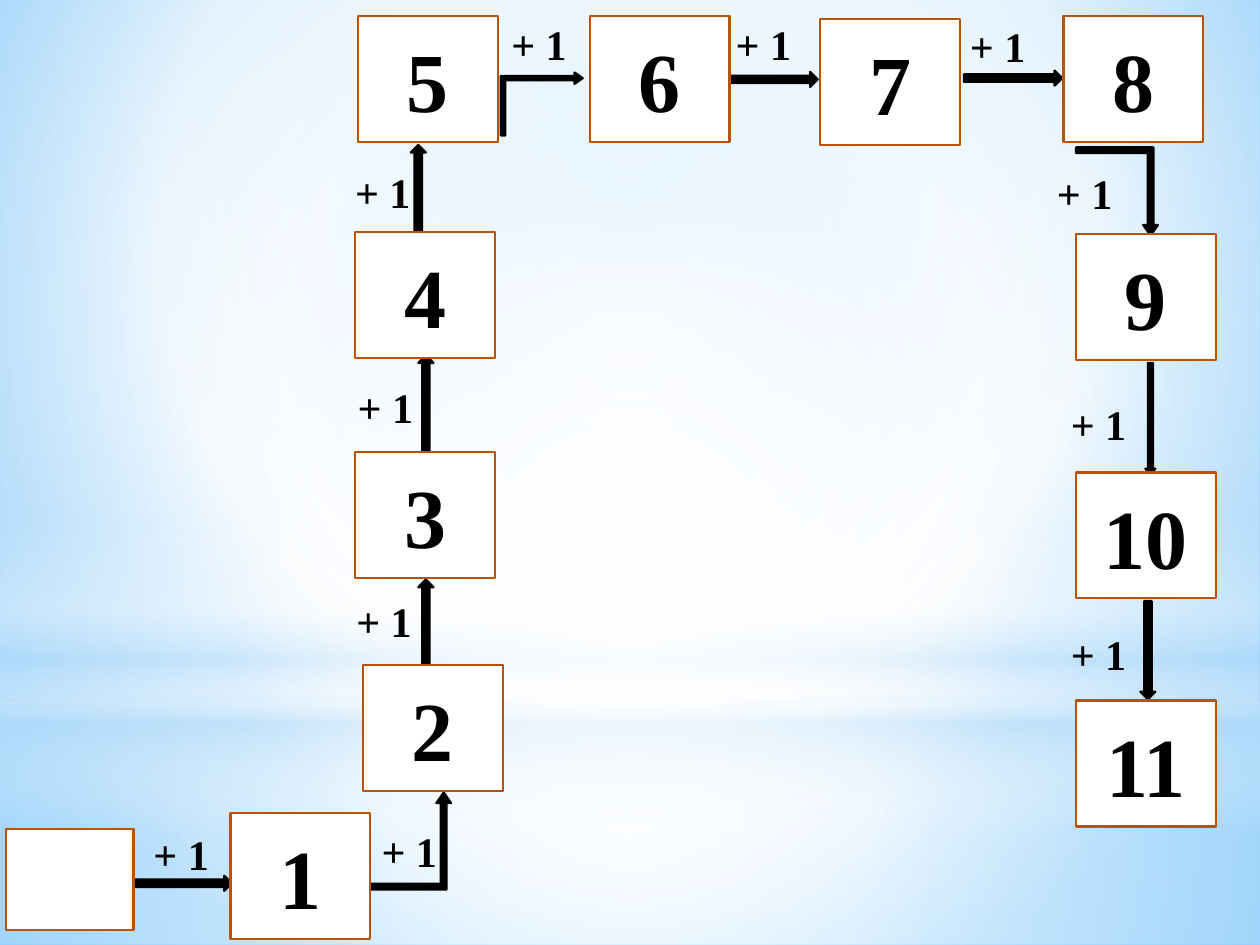
import pptx
import pptx.dml.color
import pptx.enum.shapes
import pptx.enum.text
import pptx.oxml
import pptx.oxml.ns
import pptx.util

Inches = pptx.util.Inches
Shape = pptx.enum.shapes.MSO_SHAPE
Align = pptx.enum.text.PP_ALIGN
qn = pptx.oxml.ns.qn


def paint(color_format, hex_color):
    color_format.rgb = pptx.dml.color.RGBColor.from_string(hex_color)


def write(frame, text, size=24, align=Align.LEFT, color="000000", font="Times New Roman"):
    paragraph = frame.paragraphs[0]
    paragraph.alignment = align
    run = paragraph.add_run()
    run.text = text
    run.font.size = pptx.util.Pt(size)
    run.font.bold = True
    run.font.name = font
    paint(run.font.color, color)


deck = pptx.Presentation()
deck.slide_width, deck.slide_height = Inches(10), Inches(7.5)
slide = deck.slides.add_slide(deck.slide_layouts[6])

centre = '<a:path path="circle"><a:fillToRect l="50000" t="50000" r="50000" b="50000"/></a:path>'
upper = '<a:path path="circle"><a:fillToRect l="20000" t="10000" r="20000" b="60000"/></a:path>'
downward = '<a:lin ang="5400000" scaled="0"/>'
backdrop = [
    (None, None, upper, [(0, "9ED5FF", 100), (60, "FFFFFF", 100), (100, "5BB9FF", 100)]),
    (Shape.RECTANGLE, (0, 5.58, 10, 1.92), centre,
     [(0, "FFFFFF", 91), (37, "FFFFFF", 76), (100, "B4DCFA", 79)]),
    (Shape.RECTANGLE, (0, 0, 10, 5.58), centre,
     [(0, "FFFFFF", 89), (48, "FFFFFF", 62), (100, "B4DCFA", 79)]),
    (Shape.RECTANGLE, (0, 4.12, 10, 2.5), downward,
     [(0, "FFFFFF", 0), (29, "FFFFFF", 30), (45, "B4DCFA", 40),
      (55, "FFFFFF", 26), (65, "B4DCFA", 60), (100, "FFFFFF", 0)]),
    (Shape.OVAL, (0, 1.75, 10, 5.58), centre, [(0, "FFFFFF", 100), (56, "FFFFFF", 0)]),
]
for outline, place, direction, stops in backdrop:
    if outline is None:
        fill, owner = slide.background.fill, slide._element
    else:
        glow = slide.shapes.add_shape(outline, *map(Inches, place))
        glow.shadow.inherit = False
        glow.line.fill.background()
        fill, owner = glow.fill, glow._element
    fill.gradient()
    default = owner.find(".//" + qn("a:gradFill"))
    stop_xml = "".join(
        f'<a:gs pos="{position * 1000}"><a:srgbClr val="{color}">'
        f'<a:alpha val="{alpha * 1000}"/></a:srgbClr></a:gs>'
        for position, color, alpha in stops)
    default.getparent().replace(default, pptx.oxml.parse_xml(
        f'<a:gradFill {pptx.oxml.ns.nsdecls("a")} rotWithShape="1">'
        f"<a:gsLst>{stop_xml}</a:gsLst>{direction}</a:gradFill>"))

straight, bent = Shape.RIGHT_ARROW, Shape.BENT_UP_ARROW
arrows = [
    (straight, 1.06, 6.95, 0.78, 0.12, 0, None),
    (bent, 2.93, 6.29, 0.65, 0.77, 0, None),
    (straight, 2.99, 4.93, 0.78, 0.12, 270, None),
    (straight, 2.99, 3.15, 0.78, 0.12, 270, None),
    (straight, 2.93, 1.48, 0.78, 0.12, 270, None),
    (bent, 4.05, 0.5, 0.5, 0.65, 90, "flipH"),
    (straight, 5.71, 0.57, 0.78, 0.12, 0, None),
    (straight, 7.65, 0.56, 0.78, 0.12, 0, None),
    (bent, 8.54, 1.17, 0.65, 0.7, 0, "flipV"),
    (straight, 8.69, 3.28, 0.88, 0.08, 90, None),
    (straight, 8.72, 5.1, 0.78, 0.12, 90, None),
]
for kind, left, top, width, height, rotation, flip in arrows:
    arrow = slide.shapes.add_shape(kind, Inches(left), Inches(top), Inches(width), Inches(height))
    arrow.shadow.inherit = False
    arrow.fill.solid()
    paint(arrow.fill.fore_color, "000000")
    paint(arrow.line.color, "000000")
    arrow.line.width = pptx.util.Pt(1.25)
    arrow.rotation = rotation
    if flip:
        arrow._element.spPr.find(qn("a:xfrm")).set(flip, "1")
    if kind == bent:
        for index, share in enumerate((0.07, 0.09, 0.13)):
            arrow.adjustments[index] = share

number_size = (1.11, 1)
boxes = [("", 0.05, 6.58, 1.01, 0.8)] + [
    (str(number), left, top, *number_size)
    for number, (left, top) in enumerate([
        (1.83, 6.45), (2.88, 5.28), (2.82, 3.59), (2.82, 1.84), (2.84, 0.13), (4.68, 0.13),
        (6.51, 0.15), (8.44, 0.13), (8.54, 1.86), (8.54, 3.75), (8.54, 5.56)], start=1)]
for number, *place in boxes:
    box = slide.shapes.add_shape(Shape.RECTANGLE, *map(Inches, place))
    box.shadow.inherit = False
    box.fill.solid()
    paint(box.fill.fore_color, "FFFFFF")
    paint(box.line.color, "BB5203")
    box.line.width = pptx.util.Pt(1.25)
    if number:
        box.text_frame.vertical_anchor = pptx.enum.text.MSO_ANCHOR.MIDDLE
        write(box.text_frame, number, size=48, align=Align.CENTER)

step_places = [
    (1.12, 6.53), (2.93, 6.5), (2.73, 4.68), (2.74, 2.98), (2.72, 1.27), (3.96, 0.1),
    (5.74, 0.1), (7.6, 0.11), (8.29, 1.28), (8.4, 3.11), (8.4, 4.94)]
for left, top in step_places:
    step = slide.shapes.add_textbox(Inches(left), Inches(top), Inches(0.84), Inches(0.5))
    step.text_frame.word_wrap = True
    step.text_frame.auto_size = pptx.enum.text.MSO_AUTO_SIZE.SHAPE_TO_FIT_TEXT
    write(step.text_frame, "+ 1")

deck.save("out.pptx")
